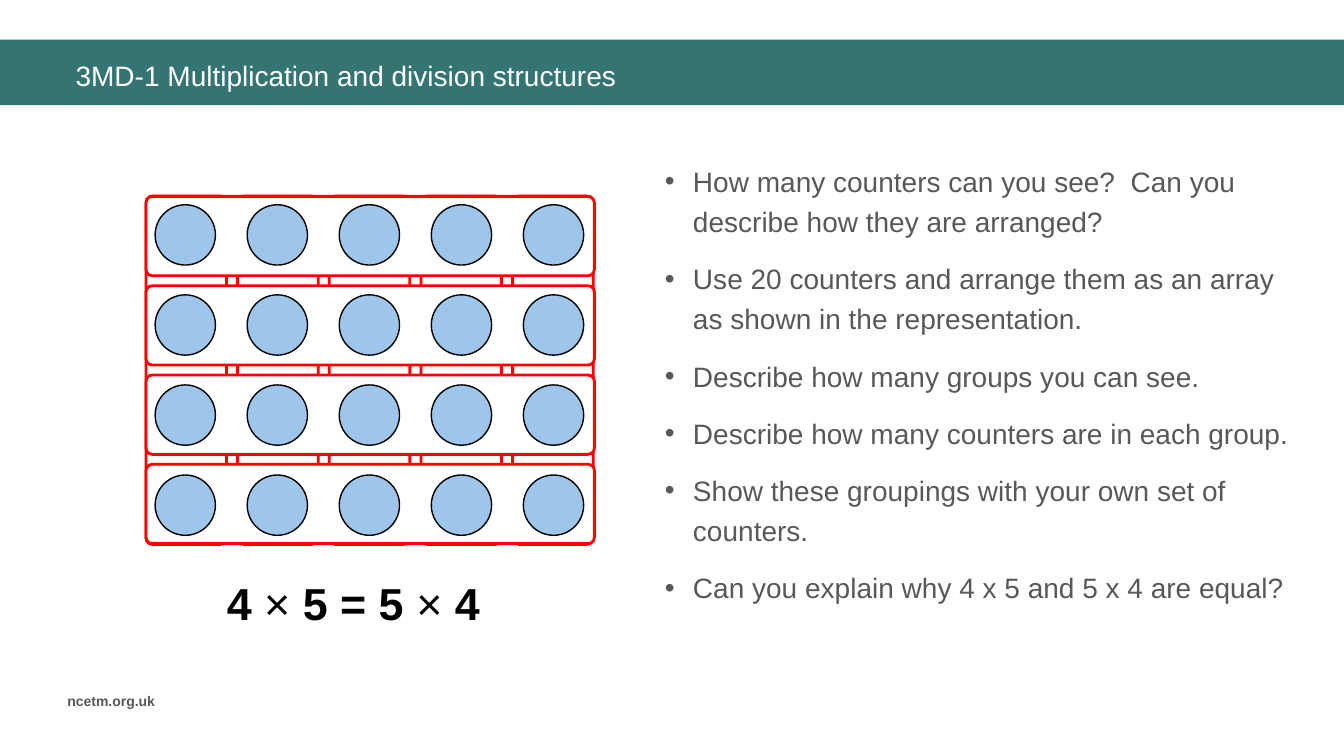
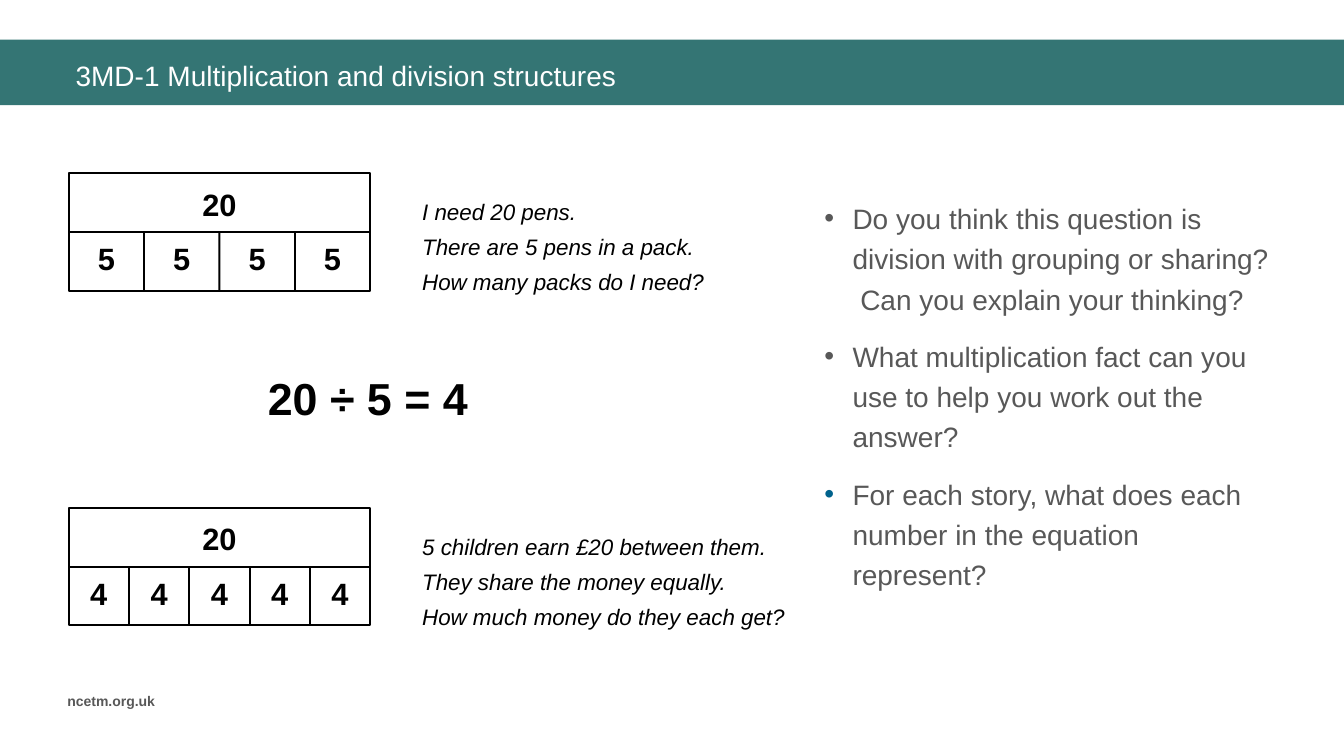
from dataclasses import dataclass
from itertools import product

from lxml.etree import SubElement
from pptx import Presentation
from pptx.dml.color import RGBColor
from pptx.enum.shapes import MSO_CONNECTOR, MSO_SHAPE
from pptx.enum.text import MSO_ANCHOR, MSO_AUTO_SIZE, PP_ALIGN
from pptx.oxml.ns import qn
from pptx.util import Cm, Pt


@dataclass(frozen=True)
class Theme:
    font: str = "Arial"
    band: str = "347574"
    grey: str = "585858"
    accent: str = "00628C"
    black: str = "000000"
    white: str = "FFFFFF"
    counter: str = "9EC6EB"
    ring: str = "FF0000"
    equation_size: int = 32
    bar_size: int = 22
    text_size: int = 20
    story_size: int = 16
    footer_size: int = 10


THEME = Theme()
TITLE = "3MD-1 Multiplication and division structures"
FOOTER = "ncetm.org.uk"
TOP, LEFT, BOTTOM, RIGHT = range(4)


class Deck:
    """Holds the style and the slide being drawn."""

    def __init__(self, theme):
        self.theme = theme
        self.presentation = Presentation()
        self.presentation.slide_width = Cm(33.87)
        self.presentation.slide_height = Cm(19.05)
        self.layout = self.presentation.slide_layouts[1]
        self.slide = None

    # Slides and their shared parts
    def new_slide(self, title):
        is_first = self.slide is None
        self.slide = self.presentation.slides.add_slide(self.layout)
        if is_first:
            self.furnish_layout()
        heading = self.slide.shapes.title
        self.place(heading, 1.65, 1.3, 31.3, 1.2)
        self.prepare(heading.text_frame, MSO_ANCHOR.MIDDLE)
        paragraph = heading.text_frame.paragraphs[0]
        paragraph.alignment = PP_ALIGN.LEFT
        self.run(paragraph, title, self.theme.text_size, self.theme.white)

    def furnish_layout(self):
        """Puts the band and the footer on the layout, once for all slides."""
        for placeholder in list(self.layout.placeholders):
            if placeholder.placeholder_format.idx >= 10:
                self.layout.shapes.element.remove(placeholder.element)
        band = self.shape(MSO_SHAPE.RECTANGLE, 0, 1, 33.87, 1.65, self.theme.band)
        footer = self.text(1.45, 17.32, 3.1, 0.68, [FOOTER],
                           self.theme.footer_size, self.theme.grey, bold=True)
        for part in (band, footer):
            self.layout.shapes.element.append(part.element)

    # Text
    def place(self, shape, left, top, width, height):
        shape.left, shape.top = Cm(left), Cm(top)
        shape.width, shape.height = Cm(width), Cm(height)

    def prepare(self, frame, anchor=MSO_ANCHOR.TOP):
        frame.word_wrap = True
        frame.auto_size = MSO_AUTO_SIZE.NONE
        frame.vertical_anchor = anchor

    def paragraphs(self, frame, count):
        return [frame.paragraphs[0]] + [frame.add_paragraph() for _ in range(count - 1)]

    def run(self, paragraph, words, size, color, bold=False, italic=False):
        run = paragraph.add_run()
        run.text = words
        font = run.font
        font.name, font.size = self.theme.font, Pt(size)
        font.bold, font.italic = bold, italic
        font.color.rgb = RGBColor.from_string(color)

    def text(self, left, top, width, height, lines, size, color=None,
             align=PP_ALIGN.LEFT, anchor=MSO_ANCHOR.TOP, spacing=None, **style):
        box = self.slide.shapes.add_textbox(Cm(left), Cm(top), Cm(width), Cm(height))
        self.prepare(box.text_frame, anchor)
        color = color or self.theme.black
        for index, paragraph in enumerate(self.paragraphs(box.text_frame, len(lines))):
            paragraph.alignment = align
            paragraph.line_spacing = spacing
            if index:
                paragraph.space_before = Pt(0.2 * size)
            self.run(paragraph, lines[index], size, color, **style)
        return box

    def equation(self, left, top, width, pieces, align=PP_ALIGN.LEFT):
        """Draws one bold line; a lone multiplication sign stays regular."""
        size, black = self.theme.equation_size, self.theme.black
        first, *others = pieces
        box = self.text(left, top, width, 1.63, [first], size, align=align, bold=True)
        for piece in others:
            self.run(box.text_frame.paragraphs[0], piece, size, black, bold=piece != "×")

    def story(self, left, top, lines):
        self.text(left, top, 10.2, 2.8, lines, self.theme.story_size,
                  spacing=1.14, italic=True)

    def questions(self, left, top, width, items, last_bullet=None):
        body = self.slide.placeholders[1]
        self.place(body, left, top, width, 11.4)
        self.prepare(body.text_frame)
        bullets = [self.theme.grey] * len(items)
        bullets[-1] = last_bullet or self.theme.grey
        for index, paragraph in enumerate(self.paragraphs(body.text_frame, len(items))):
            self.bullet(paragraph, bullets[index])
            paragraph.alignment = PP_ALIGN.LEFT
            paragraph.line_spacing = 1.2
            paragraph.space_before = Pt(6 if index else 0)
            paragraph.space_after = Pt(6)
            self.run(paragraph, items[index], self.theme.text_size, self.theme.grey)

    def bullet(self, paragraph, color):
        properties = paragraph._p.get_or_add_pPr()
        properties.set("marL", str(Cm(0.71)))
        properties.set("indent", str(-Cm(0.71)))
        SubElement(SubElement(properties, qn("a:buClr")), qn("a:srgbClr"), val=color)
        SubElement(properties, qn("a:buFont"), typeface=self.theme.font)
        SubElement(properties, qn("a:buChar"), char="•")

    # Shapes and lines
    def shape(self, kind, left, top, width, height, fill=None, line=None, weight=1):
        shape = self.slide.shapes.add_shape(kind, Cm(left), Cm(top), Cm(width), Cm(height))
        shape.shadow.inherit = False
        if fill:
            shape.fill.solid()
            shape.fill.fore_color.rgb = RGBColor.from_string(fill)
        else:
            shape.fill.background()
        if line:
            shape.line.color.rgb = RGBColor.from_string(line)
            shape.line.width = Pt(weight)
        else:
            shape.line.fill.background()
        return shape

    def ring(self, left, top, width, height):
        ring = self.shape(MSO_SHAPE.ROUNDED_RECTANGLE, left, top, width, height,
                          self.theme.white, self.theme.ring, 2)
        ring.adjustments[0] = 0.08

    def line(self, x1, y1, x2, y2):
        line = self.slide.shapes.add_connector(
            MSO_CONNECTOR.STRAIGHT, Cm(x1), Cm(y1), Cm(x2), Cm(y2))
        line.line.color.rgb = RGBColor.from_string(self.theme.black)
        line.line.width = Pt(1.5)
        SubElement(line._element.spPr, qn("a:effectLst"))
        return line

    # Diagrams
    def counter_array(self, rows, columns):
        for column in range(columns):
            self.ring(3.68 + 2.31 * column, 4.94, 2.03, 8.78)
        for row in range(rows):
            self.ring(3.68, 4.95 + 2.25 * row, 11.3, 2)
        for row, column in product(range(rows), range(columns)):
            self.shape(MSO_SHAPE.OVAL, 3.91 + 2.32 * column, 5.16 + 2.27 * row,
                       1.52, 1.52, self.theme.counter, self.theme.black)

    def bar_model(self, left, top, total, part, count):
        width, height = 7.6, 2.96
        middle, bottom, cell = top + height / 2, top + height, width / count
        label = dict(size=self.theme.bar_size, align=PP_ALIGN.CENTER, bold=True)
        whole = self.shape(MSO_SHAPE.RECTANGLE, left, top, width, height,
                           line=self.theme.black, weight=1.5)
        split = self.line(left, middle, left + width, middle)
        split.begin_connect(whole, LEFT)
        split.end_connect(whole, RIGHT)
        self.text(left, top + 0.18, width, 1.1, [total], **label)
        for index in range(count):
            x = left + cell * index
            self.text(x, top + 1.58, cell, 1.12, [part], anchor=MSO_ANCHOR.MIDDLE, **label)
            if index:
                divider = self.line(x, middle, x, bottom)
                if 2 * index == count:
                    divider.end_connect(whole, BOTTOM)


def build_array_slide(deck):
    deck.new_slide(TITLE)
    deck.counter_array(rows=4, columns=5)
    deck.equation(5.31, 14.38, 7.19, ["4 ", "×", " 5 = 5 ", "×", " 4"], PP_ALIGN.CENTER)
    deck.questions(16.5, 3.84, 16.43, [
        "How many counters can you see?  Can you describe how they are arranged?",
        "Use 20 counters and arrange them as an array as shown in the representation.",
        "Describe how many groups you can see.",
        "Describe how many counters are in each group.",
        "Show these groupings with your own set of counters.",
        "Can you explain why 4 x 5 and 5 x 4 are equal?",
    ])


def build_division_slide(deck):
    deck.new_slide(TITLE)
    problems = [
        (4.37, "5", 4, ["I need 20 pens.",
                        "There are 5 pens in a pack.",
                        "How many packs do I need?"]),
        (12.8, "4", 5, ["5 children earn £20 between them.",
                        "They share the money equally.",
                        "How much money do they each get?"]),
    ]
    for top, part, count, story in problems:
        deck.bar_model(1.73, top, "20", part, count)
        deck.story(10.39, top + 0.41, story)
    deck.equation(6.5, 9.22, 6, ["20 ÷ 5 = 4"])
    deck.questions(20.52, 4.78, 11.81, [
        "Do you think this question is division with grouping or sharing?"
        "  Can you explain your thinking?",
        "What multiplication fact can you use to help you work out the answer?",
        "For each story, what does each number in the equation represent?",
    ], last_bullet=deck.theme.accent)


def main():
    deck = Deck(THEME)
    build_array_slide(deck)
    build_division_slide(deck)
    deck.presentation.save("out.pptx")


if __name__ == "__main__":
    main()
